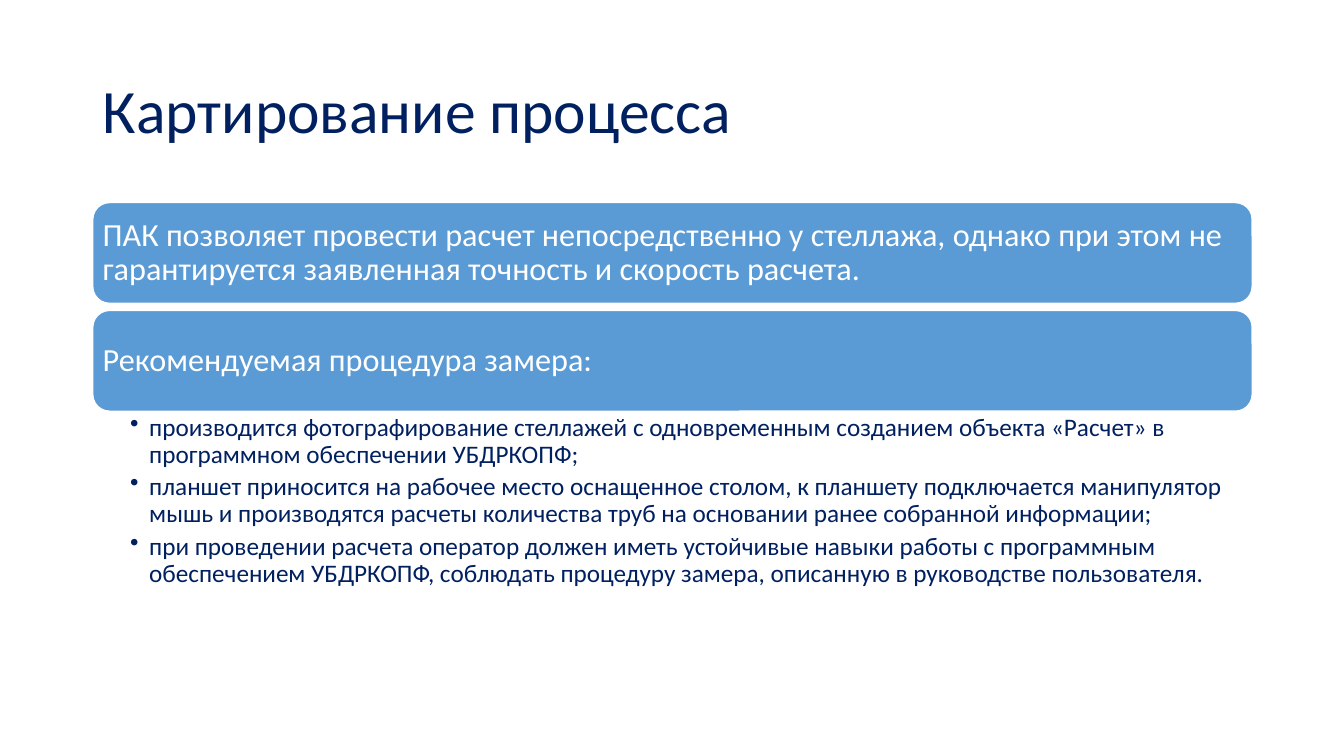
"""Build the slide on mapping the measuring process."""
from lxml import etree
from pptx import Presentation
from pptx.dml.color import RGBColor
from pptx.enum.shapes import MSO_SHAPE
from pptx.enum.text import MSO_ANCHOR, PP_ALIGN
from pptx.oxml.ns import qn
from pptx.util import Inches, Pt

ROUNDED = MSO_SHAPE.ROUNDED_RECTANGLE
MIDDLE = MSO_ANCHOR.MIDDLE
LEFT_ALIGN = PP_ALIGN.LEFT
TITLE_ONLY = 5

NAVY = RGBColor(0x00, 0x20, 0x60)
BLUE = RGBColor(0x5B, 0x9B, 0xD5)
WHITE = RGBColor(0xFF, 0xFF, 0xFF)
FONT = "Calibri"

LEFT, WIDTH = Inches(0.92), Inches(11.5)
BANNER_TOP, BANNER_HEIGHT, BANNER_STEP = Inches(2.01), Inches(1), Inches(1.07)

BANNERS = [
    "ПАК позволяет провести расчет непосредственно у стеллажа, однако при этом "
    "не гарантируется заявленная точность и скорость расчета.",
    "Рекомендуемая процедура замера:",
]
STEPS = [
    "производится фотографирование стеллажей с одновременным созданием объекта "
    "«Расчет» в программном обеспечении УБДРКОПФ;",
    "планшет приносится на рабочее место оснащенное столом, к планшету "
    "подключается манипулятор мышь и производятся расчеты количества труб "
    "на основании ранее собранной информации;",
    "при проведении расчета оператор должен иметь устойчивые навыки работы "
    "с программным обеспечением УБДРКОПФ, соблюдать процедуру замера, "
    "описанную в руководстве пользователя.",
]


def format_para(para, size, color):
    """Align a paragraph left and set its line spacing and font."""
    para.alignment = LEFT_ALIGN
    para.line_spacing = 0.9
    for span in para.runs:
        span.font.name = FONT
        span.font.size = Pt(size)
        span.font.color.rgb = color


def set_insets(frame, left, top, right, bottom):
    """Set the inner margins of a text frame in inches."""
    frame.margin_left, frame.margin_top = Inches(left), Inches(top)
    frame.margin_right, frame.margin_bottom = Inches(right), Inches(bottom)


def add_bullet(para):
    """Give a paragraph a hanging round bullet."""
    properties = para._p.get_or_add_pPr()
    properties.set("marL", str(Inches(0.19)))
    properties.set("indent", str(-Inches(0.19)))
    etree.SubElement(properties, qn("a:buChar")).set("char", "•")


def fill_title(page, text):
    """Place and format the title placeholder."""
    title = page.shapes.title
    title.left, title.top = LEFT, Inches(0.4)
    title.width, title.height = WIDTH, Inches(1.45)
    title.text_frame.text = text
    title.text_frame.vertical_anchor = MIDDLE
    format_para(title.text_frame.paragraphs[0], 44, NAVY)


def add_banner(page, top, text):
    """Add a rounded blue banner with white text."""
    banner = page.shapes.add_shape(ROUNDED, LEFT, top, WIDTH, BANNER_HEIGHT)
    banner.shadow.inherit = False
    banner.fill.solid()
    banner.fill.fore_color.rgb = BLUE
    banner.line.color.rgb = WHITE
    banner.line.width = Pt(1)
    frame = banner.text_frame
    frame.word_wrap = True
    frame.vertical_anchor = MIDDLE
    set_insets(frame, 0.05, 0.05, 0.05, 0.05)
    frame.text = text
    format_para(frame.paragraphs[0], 23, WHITE)


def add_steps(page, top, steps):
    """Add the bulleted list of steps."""
    box = page.shapes.add_textbox(LEFT, top, WIDTH, Inches(2.19))
    frame = box.text_frame
    frame.word_wrap = True
    set_insets(frame, 0.37, 0.03, 0.18, 0.03)
    frame.text = "\n".join(steps)
    for para in frame.paragraphs:
        add_bullet(para)
        para.level = 1
        para.space_after = Pt(3.6)
        format_para(para, 18, NAVY)


def main():
    """Assemble and save the deck."""
    deck = Presentation()
    deck.slide_width, deck.slide_height = Inches(13.33), Inches(7.5)
    page = deck.slides.add_slide(deck.slide_layouts[TITLE_ONLY])
    fill_title(page, "Картирование процесса")
    for index, text in enumerate(BANNERS):
        add_banner(page, BANNER_TOP + index * BANNER_STEP, text)
    add_steps(page, Inches(4.08), STEPS)
    deck.save("out.pptx")


if __name__ == "__main__":
    main()
